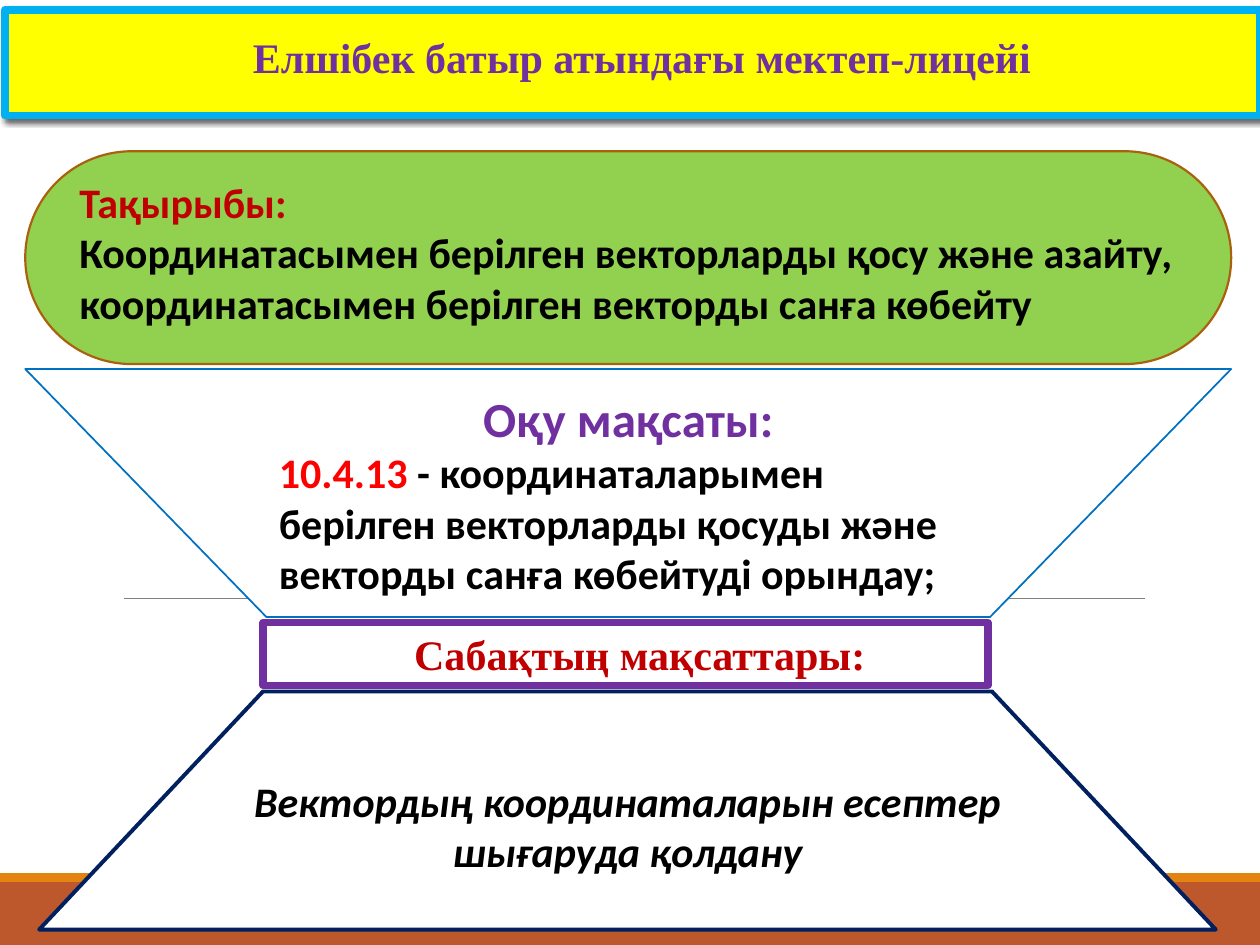
import pptx
import pptx.util
import pptx.dml.color
import pptx.enum.shapes
import pptx.enum.text
import pptx.oxml
import pptx.oxml.ns

Cm, Pt = pptx.util.Cm, pptx.util.Pt
KIND = pptx.enum.shapes.MSO_SHAPE
ALIGN = pptx.enum.text.PP_ALIGN
ANCHOR = pptx.enum.text.MSO_ANCHOR

HEX = {
    "rust": "BD582C", "orange": "E48312", "gray": "808080",
    "yellow": "FFFF00", "sky": "00B0F0", "green": "92D050",
    "brown": "A9610D", "violet": "7030A0", "crimson": "C00000",
    "red": "FF0000", "blue": "0070C0", "navy": "002060",
    "white": "FFFFFF", "black": "000000",
}
SERIF = {"name": "Times New Roman", "size": Pt(24), "bold": True}
SANS = {"name": "Calibri", "size": Pt(24), "bold": True}


def tint(name):
    return pptx.dml.color.RGBColor.from_string(HEX[name])


def add_xml(shape, body):
    """Append an effect list to the shape's properties."""
    ns = pptx.oxml.ns.nsdecls("a")
    shape.element.spPr.append(
        pptx.oxml.parse_xml(f"<a:effectLst {ns}>{body}</a:effectLst>"))


def add_form(slide, kind, box, fill=None, line=None, width=1, adj=None):
    form = slide.shapes.add_shape(kind, *map(Cm, box))
    form.shadow.inherit = False
    if adj is not None:
        form.adjustments[0] = adj
    if fill:
        form.fill.solid()
        form.fill.fore_color.rgb = tint(fill)
    else:
        form.fill.background()
    if line:
        form.line.color.rgb = tint(line)
        form.line.width = Pt(width)
    else:
        form.line.fill.background()
    return form


def write(frame, paras, **look):
    """Fill a frame; each paragraph is (alignment, [(text, colour, font)])."""
    for key, value in {"word_wrap": True, **look}.items():
        setattr(frame, key, value)
    for i, (align, runs) in enumerate(paras):
        para = frame.add_paragraph() if i else frame.paragraphs[0]
        para.alignment = align
        for text, color, font in runs:
            run = para.add_run()
            run.text = text
            for key, value in font.items():
                setattr(run.font, key, value)
            run.font.color.rgb = tint(color)


def add_label(slide, box, paras):
    label = slide.shapes.add_textbox(*map(Cm, box))
    write(label.text_frame, paras)


def add_base(slide, box):
    # Bottom bands and thin rule
    x, y, w, h = box
    add_form(slide, KIND.RECTANGLE, (x, y + h - 1.27, w, 1.27), "rust")
    add_form(slide, KIND.RECTANGLE, (x, y + h - 1.45, w, 0.18), "orange")
    ends = (x + 2.51, y + 12.07, x + 23.09, y + 12.07)
    rule = slide.shapes.add_connector(
        pptx.enum.shapes.MSO_CONNECTOR.STRAIGHT, *map(Cm, ends))
    rule.line.color.rgb = tint("gray")
    rule.line.width = Pt(0.5)
    add_xml(rule, "")


def add_banner(slide, box):
    # School name on a shadowed banner
    x, y, w, h = box
    banner = add_form(slide, KIND.ROUNDED_RECTANGLE, box,
                      "yellow", "sky", 4.5, 0)
    banner.shadow.inherit = True
    add_xml(banner, '<a:outerShdw blurRad="38100" dist="25400" dir="2700000">'
            '<a:srgbClr val="000000"><a:alpha val="60000"/></a:srgbClr>'
            '</a:outerShdw>')
    title = slide.shapes.title
    spot = {"left": x + 0.99, "top": y - 0.02,
            "width": w - 1.6, "height": h - 0.5}
    for key, value in spot.items():
        setattr(title, key, Cm(value))
    write(title.text_frame,
          [(ALIGN.CENTER, [("Елшібек батыр атындағы мектеп-лицейі",
                            "violet", SERIF)])],
          vertical_anchor=ANCHOR.TOP, margin_top=Cm(0.46),
          auto_size=pptx.enum.text.MSO_AUTO_SIZE.NONE)
    banner.element.addnext(title.element)


def add_topic(slide, box):
    # Lesson topic
    x, y, w, h = box
    add_form(slide, KIND.ROUNDED_RECTANGLE, box, "green", "brown", 1.25, 0.5)
    add_label(slide, (x + 0.84, y + 0.38, w - 0.26, h - 0.96), [
        (ALIGN.LEFT, [("Тақырыбы:", "crimson", SANS)]),
        (ALIGN.LEFT, [("Координатасымен берілген векторларды қосу және "
                       "азайту, координатасымен берілген векторды санға "
                       "көбейту", "black", SANS)])])


def add_goal(slide, box):
    # Learning goal
    goal = add_form(slide, KIND.FLOWCHART_MANUAL_OPERATION, box,
                    "white", "blue", 1)
    write(goal.text_frame, [
        (ALIGN.CENTER, [("Оқу мақсаты:", "violet",
                         {**SANS, "size": Pt(28)})]),
        (ALIGN.LEFT, [("10.4.13 ", "red", SANS),
                      ("- координаталарымен берілген векторларды қосуды "
                       "және векторды санға көбейтуді орындау;",
                       "black", SANS)])],
        vertical_anchor=ANCHOR.MIDDLE)


def add_aims(slide, box):
    # Heading of the lesson aims
    x, y, w, h = box
    add_form(slide, KIND.ROUNDED_RECTANGLE, box, None, "violet", 4.5, 0)
    add_label(slide, (x + 2.79, y, w - 3.4, h), [
        (ALIGN.LEFT, [("Сабақтың мақсаттары:", "crimson", SERIF)])])


def add_task(slide, box):
    # Lesson aim itself
    task = add_form(slide, KIND.TRAPEZOID, box, "white", "navy", 2.25, 0.94)
    write(task.text_frame, [
        (ALIGN.CENTER, [("Вектордың координаталарын есептер шығаруда "
                         "қолдану", "black", {**SANS, "italic": True})])],
        vertical_anchor=ANCHOR.MIDDLE)


def main():
    deck = pptx.Presentation()
    deck.slide_width, deck.slide_height = Cm(25.4), Cm(19.05)
    slide = deck.slides.add_slide(deck.slide_layouts.get_by_name("Title Only"))
    add_base(slide, (0, 0, 25.4, 19.05))
    add_banner(slide, (0.1, 0.2, 25.3, 2.13))
    add_topic(slide, (0.51, 3.05, 24.31, 4.29))
    add_aims(slide, (5.31, 12.55, 14.6, 1.27))
    add_goal(slide, (0.51, 7.44, 24.31, 5))
    add_task(slide, (0.79, 13.94, 23.72, 4.8))
    deck.save("out.pptx")


if __name__ == "__main__":
    main()
